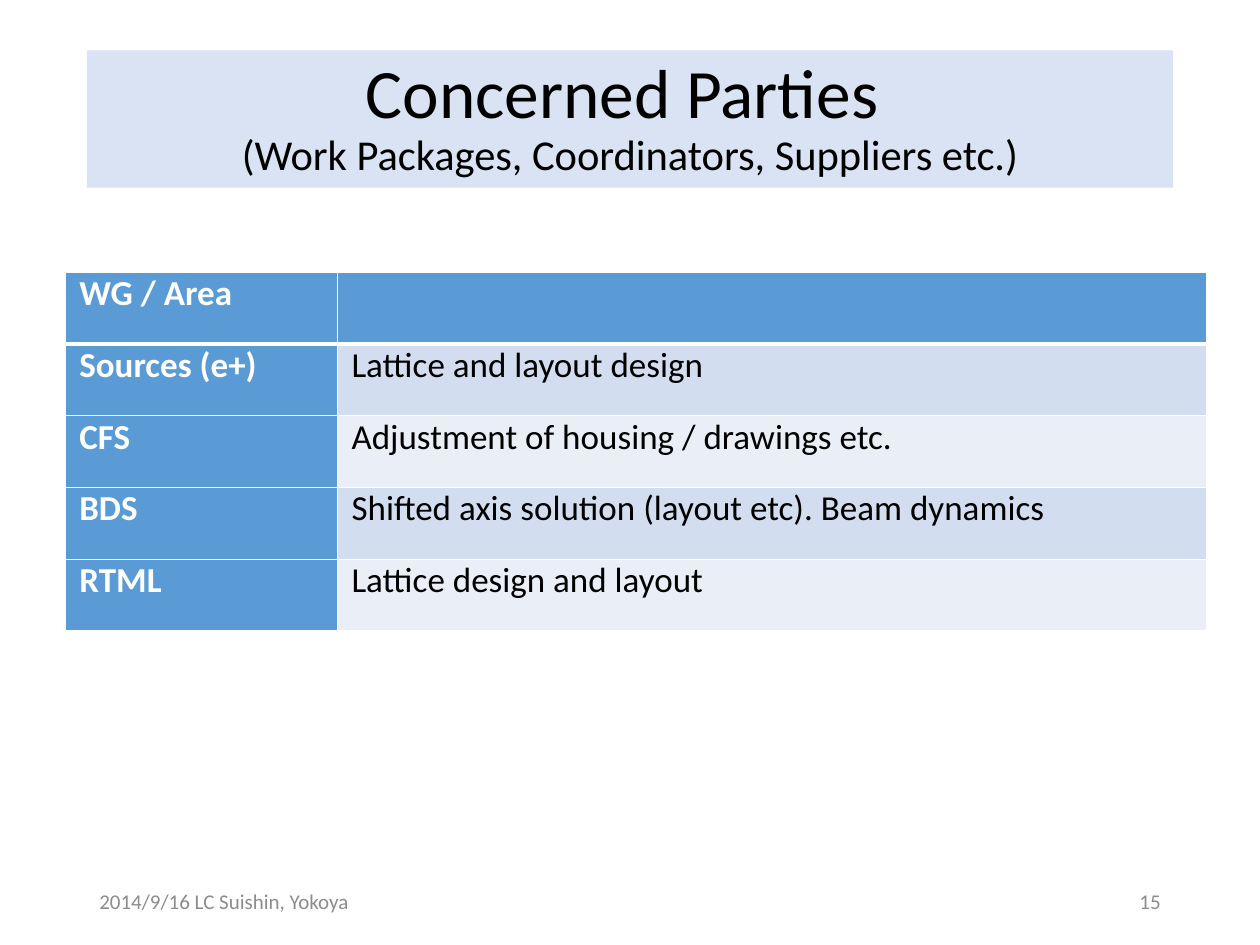
from dataclasses import dataclass
from typing import NamedTuple

from lxml.etree import SubElement
from pptx import Presentation
from pptx.dml.color import RGBColor
from pptx.enum.shapes import MSO_SHAPE as Shape
from pptx.enum.text import MSO_ANCHOR as Anchor, PP_ALIGN as Align
from pptx.oxml.ns import qn
from pptx.util import Inches, Pt


@dataclass(frozen=True)
class Theme:
    font: str = "Calibri"
    ink: str = "000000"
    white: str = "FFFFFF"
    muted: str = "8C8C8C"
    banner: str = "DAE3F3"
    accent: str = "5B9BD5"
    bands: tuple[str, str] = ("D2DEEF", "EAEFF7")
    title_size: float = 39.6
    subtitle_size: float = 24.3
    table_size: float = 20
    footer_size: float = 12
    thin_line: float = 1
    thick_line: float = 3


class Area(NamedTuple):
    name: str
    task: str


class Footer(NamedTuple):
    text: str
    left: float
    align: Align


THEME = Theme()
MARGIN = 0.69
COLUMN_WIDTHS = (2.16, 6.9)
ROW_HEIGHT = 0.57
AREAS = [
    Area("WG / Area", ""),
    Area("Sources (e+)", "Lattice and layout design"),
    Area("CFS", "Adjustment of housing / drawings etc."),
    Area("BDS", "Shifted axis solution (layout etc). Beam dynamics"),
    Area("RTML", "Lattice design and layout"),
]
FOOTERS = [
    Footer("2014/9/16 LC Suishin, Yokoya", MARGIN, Align.LEFT),
    Footer("15", 7.06, Align.RIGHT),
]


def style_span(span, size: float, color: str, bold: bool = False) -> None:
    span.font.name = THEME.font
    span.font.size = Pt(size)
    span.font.bold = bold
    span.font.color.rgb = RGBColor.from_string(color)


def add_title(page) -> None:
    box = page.shapes.add_shape(
        Shape.RECTANGLE, Inches(MARGIN), Inches(0.4), Inches(8.62), Inches(1.09))
    box.shadow.inherit = False
    box.fill.solid()
    box.fill.fore_color.rgb = RGBColor.from_string(THEME.banner)
    box.line.fill.background()
    frame = box.text_frame
    frame.word_wrap = True
    frame.vertical_anchor = Anchor.MIDDLE
    para = frame.paragraphs[0]
    para.text = "Concerned Parties \v(Work Packages, Coordinators, Suppliers etc.)"
    para.alignment = Align.CENTER
    para.line_spacing = 0.9
    for span, size in zip(para.runs, (THEME.title_size, THEME.subtitle_size)):
        style_span(span, size, THEME.ink)


def set_borders(cell, top: float, bottom: float) -> None:
    properties = cell._tc.get_or_add_tcPr()
    widths = {"lnL": THEME.thin_line, "lnR": THEME.thin_line, "lnT": top, "lnB": bottom}
    for position, (side, width) in enumerate(widths.items()):
        line = SubElement(properties, qn(f"a:{side}"), w=str(Pt(width)))
        fill = SubElement(line, qn("a:solidFill"))
        SubElement(fill, qn("a:srgbClr"), val=THEME.white)
        properties.insert(position, line)


def fill_cell(cell, text: str, row: int, column: int) -> None:
    heading = row == 0 or column == 0
    cell.fill.solid()
    cell.fill.fore_color.rgb = RGBColor.from_string(
        THEME.accent if heading else THEME.bands[(row - 1) % 2])
    cell.margin_left = cell.margin_right = Inches(0.11)
    cell.margin_top = cell.margin_bottom = 0
    # The rule under the header row is thicker than the others
    set_borders(cell,
                THEME.thick_line if row == 1 else THEME.thin_line,
                THEME.thick_line if row == 0 else THEME.thin_line)
    if not text:
        return
    para = cell.text_frame.paragraphs[0]
    para.text = text
    para.alignment = Align.JUSTIFY
    style_span(para.runs[0], THEME.table_size,
               THEME.white if heading else THEME.ink, heading)


def add_area_table(page) -> None:
    table = page.shapes.add_table(
        len(AREAS), len(COLUMN_WIDTHS), Inches(0.52), Inches(2.16),
        Inches(sum(COLUMN_WIDTHS)), Inches(ROW_HEIGHT * len(AREAS))).table
    table.first_col = True
    for column, width in zip(table.columns, COLUMN_WIDTHS):
        column.width = Inches(width)
    for row, area in enumerate(AREAS):
        table.rows[row].height = Inches(ROW_HEIGHT)
        for column, text in enumerate(area):
            fill_cell(table.cell(row, column), text, row, column)


def add_footer(page, footer: Footer) -> None:
    box = page.shapes.add_textbox(
        Inches(footer.left), Inches(6.95), Inches(2.25), Inches(0.4))
    frame = box.text_frame
    frame.word_wrap = True
    frame.vertical_anchor = Anchor.MIDDLE
    para = frame.paragraphs[0]
    para.text = footer.text
    para.alignment = footer.align
    style_span(para.runs[0], THEME.footer_size, THEME.muted)


def main() -> None:
    deck = Presentation()
    deck.slide_width, deck.slide_height = Inches(10), Inches(7.5)
    page = deck.slides.add_slide(deck.slide_layouts[6])

    # Title banner, table, then footer line
    add_title(page)
    add_area_table(page)
    for footer in FOOTERS:
        add_footer(page, footer)

    deck.save("out.pptx")


if __name__ == "__main__":
    main()
